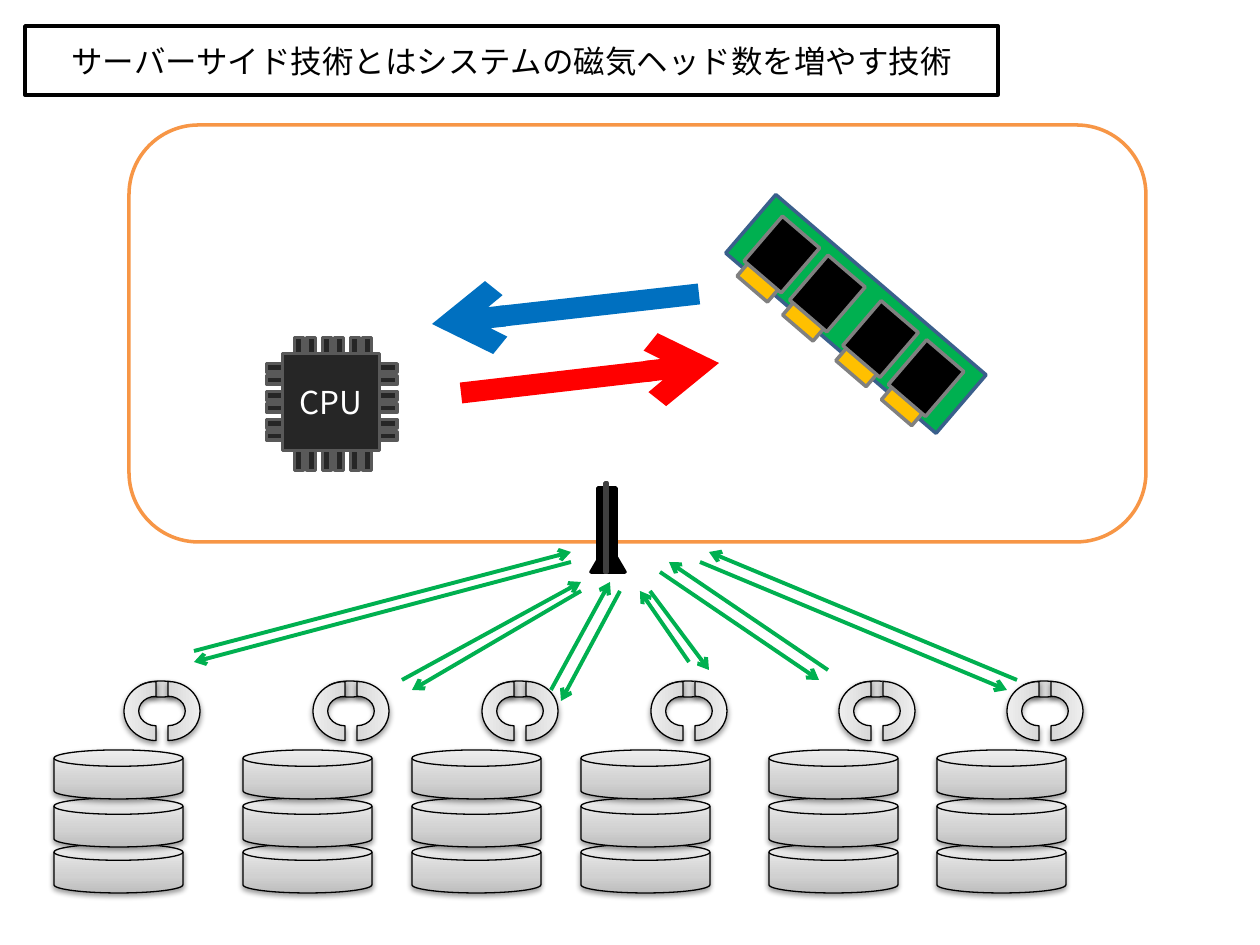
from copy import deepcopy
from math import cos, radians, sin

from lxml.etree import SubElement
from pptx import Presentation
from pptx.dml.color import RGBColor
from pptx.enum.shapes import MSO_CONNECTOR, MSO_SHAPE as Preset
from pptx.enum.text import MSO_ANCHOR, MSO_AUTO_SIZE, PP_ALIGN
from pptx.oxml.ns import qn
from pptx.util import Emu, Pt

TITLE = "サーバーサイド技術とはシステムの磁気ヘッド数を増やす技術"
FONT = "Noto Sans CJK JP"
COLORS = {
    "white": "FFFFFF", "black": "000000", "orange": "F79646",
    "cpu": "262626", "cpu_edge": "595959",
    "board": "00B050", "board_edge": "3A5F8C",
    "contact": "FFC000", "chip_edge": "808080", "head_edge": "404040",
    "green": "00B050", "blue": "0070C0", "red": "FF0000",
}
METAL_STOPS = [(0, "BDBDBD"), (0.35, "D1D1D1"), (1, "EEEEEE")]

TITLE_BOX = (25, 26, 973, 69)
SERVER_BOX = (129, 125, 1017, 417)
CPU_CENTER, CPU_SIZE = (331, 402), 97
PIN_STEP = 28
MEMORY_CENTER, MEMORY_TURN = (856, 314), 310.6
CHIP_OFFSETS = (35, 95, -95, -35)
DISK_LEFTS = (54, 243, 412, 581, 769, 937)
DISK_TOPS = (844, 798, 750)  # lowest disk first

BUS_ARROWS = [
    ((699, 294), (432, 324), "blue"),
    ((461, 393), (719, 363), "red"),
]
DISK_ARROWS = [
    ((194, 651), (571, 552)), ((571, 562), (194, 662)),
    ((402, 680), (581, 582)), ((581, 591), (412, 690)),
    ((551, 690), (610, 582)), ((620, 591), (561, 701)),
    ((689, 662), (640, 591)), ((650, 591), (709, 670)),
    ((828, 670), (669, 562)), ((660, 572), (819, 680)),
    ((1017, 680), (709, 552)), ((700, 562), (1007, 690)),
]


def px(length):
    return Emu(round(length * 914400 / 126))


def rgb(name):
    return RGBColor.from_string(COLORS[name])


def paint(shape, fill, line, width=2):
    shape.fill.solid()
    shape.fill.fore_color.rgb = rgb(fill)
    shape.line.color.rgb = rgb(line)
    shape.line.width = Pt(width)


def add_preset(parent, preset, box, fill, line, turn=0):
    shape = parent.shapes.add_shape(preset, *map(px, box))
    paint(shape, fill, line)
    shape.shadow.inherit = False
    shape.rotation = turn
    return shape


def centered(x, y, width, height):
    """Box of the given size around a centre point."""
    return x - width / 2, y - height / 2, width, height


def set_text(shape, text, color):
    frame = shape.text_frame
    frame.text = text
    frame.word_wrap = True
    frame.auto_size = MSO_AUTO_SIZE.NONE
    frame.vertical_anchor = MSO_ANCHOR.MIDDLE
    para = frame.paragraphs[0]
    para.alignment = PP_ALIGN.CENTER
    font = para.runs[0].font
    font.name, font.size = FONT, Pt(18)
    font.color.rgb = rgb(color)
    SubElement(para.runs[0]._r.get_or_add_rPr(), qn("a:ea"), typeface=FONT)


def add_arrow(page, start, end, color, width):
    arrow = page.shapes.add_connector(
        MSO_CONNECTOR.STRAIGHT, *map(px, start + end))
    arrow.line.color.rgb = rgb(color)
    arrow.line.width = Pt(width)
    SubElement(arrow.line._get_or_add_ln(), qn("a:tailEnd"), type="arrow")
    SubElement(arrow._element.spPr, qn("a:effectLst"))


def add_metal(group, preset, box, turn=0):
    """Shape with a grey gradient, a thin black line and a soft shadow."""
    shape = add_preset(group, preset, box, "white", "black", turn)
    shape.line.width = Pt(0.75)
    shape.fill.gradient()
    shape.fill.gradient_angle = 90
    stop_list = shape._element.spPr.find(qn("a:gradFill")).find(qn("a:gsLst"))
    stop_list.append(deepcopy(stop_list[0]))
    for stop, (position, color) in zip(shape.fill.gradient_stops, METAL_STOPS):
        stop.position = position
        stop.color.rgb = RGBColor.from_string(color)
    effects = shape._element.spPr.find(qn("a:effectLst"))
    shadow = SubElement(effects, qn("a:outerShdw"), blurRad=str(Pt(3.1)),
                        dist=str(Pt(1.6)), dir="5400000", rotWithShape="0")
    color = SubElement(shadow, qn("a:srgbClr"), val=COLORS["black"])
    SubElement(color, qn("a:alpha"), val="38000")
    return shape


def add_cpu(page):
    group = page.shapes.add_group_shape()
    x, y = CPU_CENTER
    for side in (-55, 55):
        for step in (-PIN_STEP, 0, PIN_STEP):
            add_preset(group, Preset.MATH_EQUAL,
                       centered(x + 1 + side, y + step, 28, 35),
                       "cpu", "cpu_edge")
            add_preset(group, Preset.MATH_EQUAL,
                       centered(x + 2 + step, y + 2 + side, 31, 35),
                       "cpu", "cpu_edge", 90)
    core = add_preset(group, Preset.RECTANGLE,
                      centered(x, y, CPU_SIZE, CPU_SIZE), "cpu", "cpu_edge")
    set_text(core, "CPU", "white")


def add_memory(page):
    group = page.shapes.add_group_shape()
    angle = radians(MEMORY_TURN)

    def add_part(across, along, size, fill, line):
        x = MEMORY_CENTER[0] + across * cos(angle) - along * sin(angle)
        y = MEMORY_CENTER[1] + across * sin(angle) + along * cos(angle)
        add_preset(group, Preset.RECTANGLE, centered(x, y, *size),
                   fill, line, MEMORY_TURN)

    add_part(0, 0, (77, 277), "board", "board_edge")
    for across, size, fill in ((-39, (19, 40), "contact"),
                               (-3, (59, 49), "black")):
        for along in CHIP_OFFSETS:
            add_part(across, along, size, fill, "chip_edge")


def add_disk_stack(page, left):
    """Three disks under a magnetic head."""
    group = page.shapes.add_group_shape()
    for top in DISK_TOPS:
        add_metal(group, Preset.FLOWCHART_MAGNETIC_DISK, (left, top, 129, 49))
    add_metal(group, Preset.OVAL, centered(left + 107, 689, 16, 47), 90)
    add_metal(group, Preset.BLOCK_ARC, centered(left + 114, 711, 59, 64), 90)
    left_arc = add_metal(group, Preset.BLOCK_ARC,
                         centered(left + 102, 711, 59, 64), 90)
    left_arc._element.spPr.xfrm.set("flipV", "1")


def add_connector_plug(page):
    group = page.shapes.add_group_shape()
    add_preset(group, Preset.RECTANGLE, (598, 488, 18, 72), "black", "black")
    add_preset(group, Preset.ISOSCELES_TRIANGLE, (591, 543, 34, 29),
               "black", "black")
    add_preset(group, Preset.RECTANGLE, (605, 483, 2, 89),
               "black", "head_edge")


def main():
    deck = Presentation()
    deck.slide_width, deck.slide_height = px(1260), px(945)
    page = deck.slides.add_slide(deck.slide_layouts[5])

    title = page.shapes.title
    title.left, title.top, title.width, title.height = map(px, TITLE_BOX)
    paint(title, "white", "black")
    set_text(title, TITLE, "black")

    add_preset(page, Preset.ROUNDED_RECTANGLE, SERVER_BOX, "white", "orange")
    add_cpu(page)
    add_memory(page)
    for start, end, color in BUS_ARROWS:
        add_arrow(page, start, end, color, 12)
    for left in DISK_LEFTS:
        add_disk_stack(page, left)
    add_connector_plug(page)
    for start, end in DISK_ARROWS:
        add_arrow(page, start, end, "green", 2.25)

    deck.save("out.pptx")


if __name__ == "__main__":
    main()
